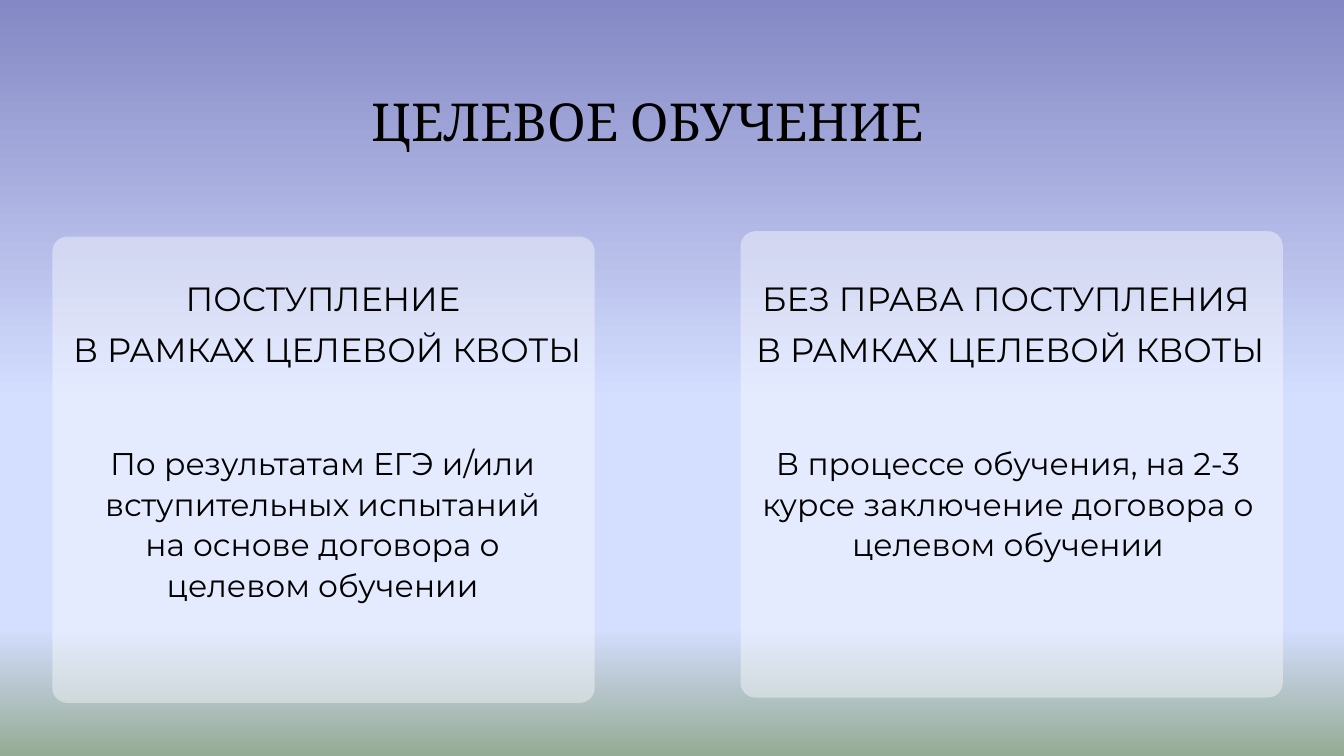
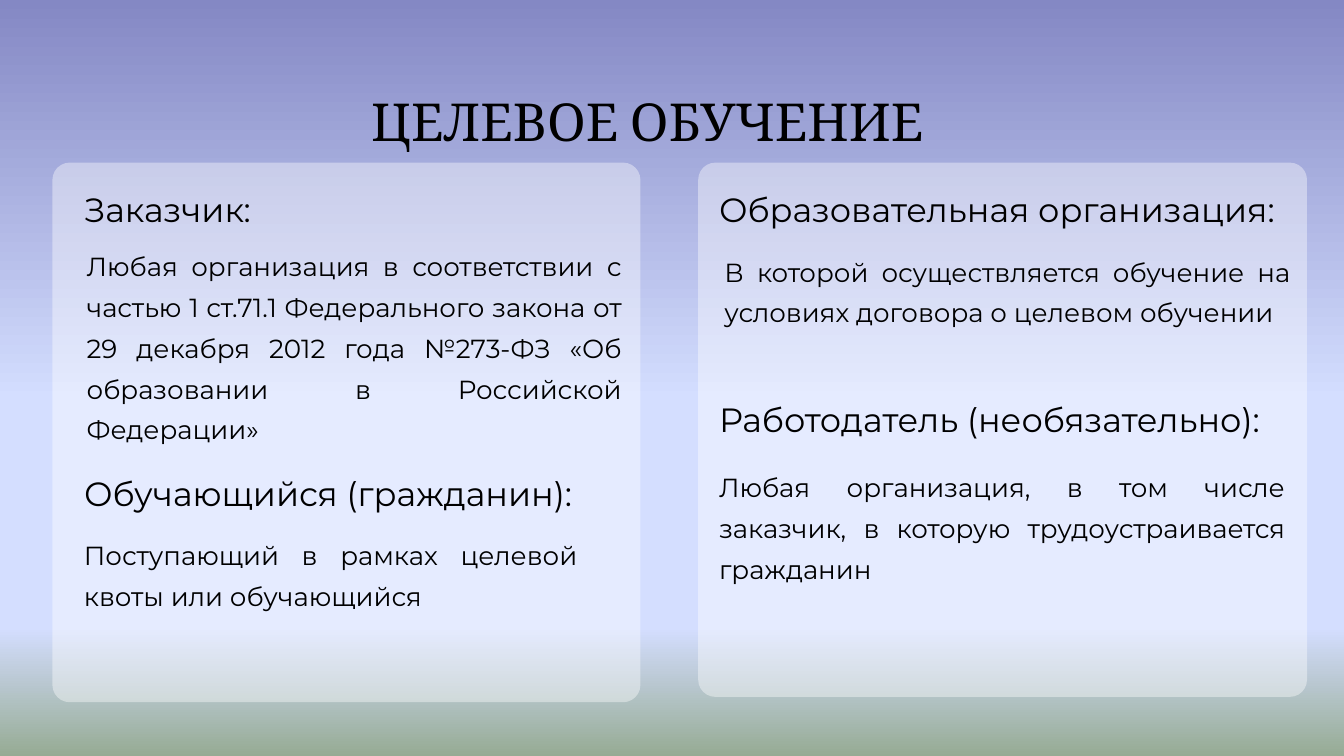
import copy

import pptx
import pptx.dml.color
import pptx.enum.shapes
import pptx.enum.text
import pptx.oxml
import pptx.oxml.ns
import pptx.util

Inches, Pt = pptx.util.Inches, pptx.util.Pt
ALIGN = pptx.enum.text.PP_ALIGN
TITLE_ONLY = 5

BLACK, WHITE = "000000", "FFFFFF"
SKY_STOPS = [(0, "8488C4"), (0.53, "D4DEFF"), (0.83, "D4DEFF"), (1, "96AB94")]
PANEL_OPACITY = 40
PANEL_ROUNDING = 0.032

TITLE = {"name": "Cambria", "size": Pt(56), "spacing": Pt(84)}
HEADING = {"name": "Montserrat", "size": Pt(36), "spacing": Pt(54.6)}
LEAD = {"name": "Montserrat", "size": Pt(33.6), "spacing": Pt(43.7)}
DETAIL = {"name": "Montserrat", "size": Pt(28), "spacing": Pt(43.7)}


def rgb(value):
    return pptx.dml.color.RGBColor.from_string(value)


def place(shape, area):
    for side, length in zip(("left", "top", "width", "height"), area):
        setattr(shape, side, Inches(length))


def paint_background(master):
    """Fill the master with the vertical sky gradient that all slides inherit."""
    fill = master.background.fill
    fill.gradient()
    fill.gradient_angle = 270
    stop_list = master.element.find(".//" + pptx.oxml.ns.qn("a:gsLst"))
    for _ in range(len(SKY_STOPS) - len(stop_list)):
        stop_list.append(copy.deepcopy(stop_list[0]))
    for stop, (position, color) in zip(fill.gradient_stops, SKY_STOPS):
        stop.position = position
        stop.color.rgb = rgb(color)


def write(box, lines, style, align):
    """Put one paragraph per line into a box without insets."""
    frame = box.text_frame
    settings = {
        "margin_left": 0, "margin_top": 0, "margin_right": 0, "margin_bottom": 0,
        "word_wrap": True,
        "auto_size": pptx.enum.text.MSO_AUTO_SIZE.NONE,
        "vertical_anchor": pptx.enum.text.MSO_ANCHOR.TOP,
    }
    for name, value in settings.items():
        setattr(frame, name, value)
    frame.text = "\n".join(lines)
    for para in frame.paragraphs:
        para.alignment = align
        para.line_spacing = style["spacing"]
        for span in para.runs:
            for name in ("name", "size"):
                setattr(span.font, name, style[name])
            span.font.color.rgb = rgb(BLACK)


def add_text(page, area, lines, style, align):
    box = page.shapes.add_textbox(*map(Inches, area))
    write(box, lines, style, align)


def add_panel(page, area):
    """Add a translucent white rounded panel."""
    kind = pptx.enum.shapes.MSO_SHAPE.ROUNDED_RECTANGLE
    panel = page.shapes.add_shape(kind, *map(Inches, area))
    panel.adjustments[0] = PANEL_ROUNDING
    panel.shadow.inherit = False
    panel.line.fill.background()
    panel.fill.solid()
    panel.fill.fore_color.rgb = rgb(WHITE)
    color = panel.element.spPr.find(".//" + pptx.oxml.ns.qn("a:srgbClr"))
    alpha = pptx.oxml.parse_xml(
        f'<a:alpha {pptx.oxml.ns.nsdecls("a")} val="{PANEL_OPACITY * 1000}"/>')
    color.append(alpha)


def add_page(deck, panels, texts, align):
    """Add a titled slide with panels and (area, style, lines) texts."""
    page = deck.slides.add_slide(deck.slide_layouts[TITLE_ONLY])
    place(page.shapes.title, (4.61, 1.09, 10.05, 1.09))
    write(page.shapes.title, ["ЦЕЛЕВОЕ ОБУЧЕНИЕ"], TITLE, ALIGN.CENTER)
    for area in panels:
        add_panel(page, area)
    for area, style, lines in texts:
        add_text(page, area, lines, style, align)


def add_admission_page(deck):
    panels = [(0.78, 3.52, 8.07, 6.94), (11.02, 3.44, 8.07, 6.94)]
    texts = [
        ((0.78, 3.98, 8.18, 1.54), HEADING,
         ["ПОСТУПЛЕНИЕ ", "В РАМКАХ ЦЕЛЕВОЙ КВОТЫ"]),
        ((1.43, 6.56, 6.74, 3.05), LEAD,
         ["По результатам ЕГЭ и/или вступительных испытаний "
          "на основе договора о целевом обучении"]),
        ((11.17, 3.98, 7.73, 1.54), HEADING,
         ["БЕЗ ПРАВА ПОСТУПЛЕНИЯ ", "В РАМКАХ ЦЕЛЕВОЙ КВОТЫ"]),
        ((11.25, 6.56, 7.5, 1.85), LEAD,
         ["В процессе обучения, на 2-3 курсе заключение договора "
          "о целевом обучении"]),
    ]
    add_page(deck, panels, texts, ALIGN.CENTER)


def add_parties_page(deck):
    panels = [(0.78, 2.42, 8.75, 8.03), (10.39, 2.42, 9.06, 7.95)]
    left, right = 1.25, 10.7
    texts = [
        ((left, 2.66, 8.18, 0.7), HEADING, ["Заказчик:"]),
        ((1.29, 3.59, 7.96, 3.03), DETAIL,
         ["Любая организация в соответствии с частью 1 ст.71.1 "
          "Федерального закона от 29 декабря 2012 года №273-ФЗ "
          "«Об образовании в Российской Федерации» "]),
        ((left, 6.88, 8.18, 0.7), HEADING, ["Обучающийся (гражданин):"]),
        ((left, 7.89, 7.34, 1.18), DETAIL,
         ["Поступающий в рамках целевой квоты или обучающийся"]),
        ((right, 2.66, 8.52, 0.7), HEADING, ["Образовательная организация:"]),
        ((10.78, 3.67, 8.42, 1.18), DETAIL,
         ["В которой осуществляется обучение на условиях договора "
          "о целевом обучении"]),
        ((right, 5.78, 8.28, 0.77), HEADING, ["Работодатель (необязательно):"]),
        ((right, 6.88, 8.42, 1.85), DETAIL,
         ["Любая организация, в том числе заказчик, в которую "
          "трудоустраивается гражданин"]),
    ]
    add_page(deck, panels, texts, ALIGN.JUSTIFY)


def main():
    deck = pptx.Presentation()
    deck.slide_width, deck.slide_height = Inches(20), Inches(11.25)
    paint_background(deck.slide_master)
    add_admission_page(deck)
    add_parties_page(deck)
    deck.save("out.pptx")


if __name__ == "__main__":
    main()
